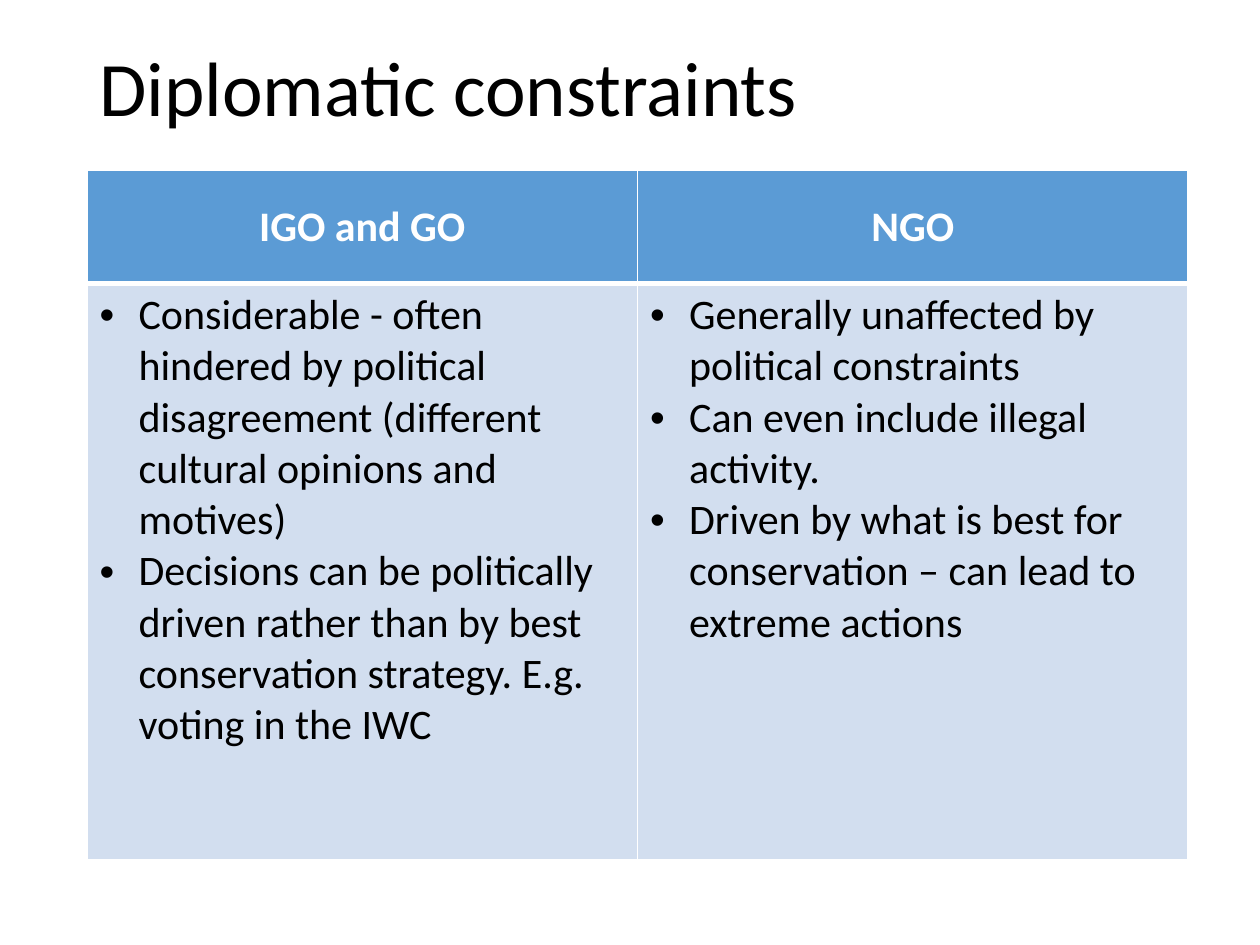
from dataclasses import dataclass

from lxml.etree import SubElement
from pptx import Presentation
from pptx.dml.color import RGBColor
from pptx.enum.text import MSO_ANCHOR, PP_ALIGN
from pptx.oxml import parse_xml
from pptx.oxml.ns import nsdecls, qn
from pptx.slide import Slide
from pptx.table import Table, _Cell
from pptx.util import Inches, Pt

WIDE, HIGH = Inches(10), Inches(7.5)


@dataclass(frozen=True)
class Theme:
    font: str = "Calibri"
    ink: str = "000000"
    paper: str = "FFFFFF"
    head: str = "5B9BD5"
    body: str = "D2DEEF"
    title: int = 44
    text: int = 24
    thin: int = 1
    thick: int = 3
    indent: float = 0.31


@dataclass(frozen=True)
class Box:
    left: float
    top: float
    width: float
    height: float

    def place(self) -> tuple[int, int, int, int]:
        return (int(self.left * WIDE), int(self.top * HIGH),
                int(self.width * WIDE), int(self.height * HIGH))


@dataclass(frozen=True)
class Column:
    head: str
    points: tuple[str, ...]


THEME = Theme()
TITLE = Box(0.069, 0, 0.862, 0.193)
GRID = Box(0.069, 0.18, 0.874, 0.73)
HEAD_SHARE = 0.12
COLUMNS = (
    Column("IGO and GO", (
        "Considerable - often hindered by political disagreement "
        "(different cultural opinions and motives)",
        "Decisions can be politically driven rather than by best "
        "conservation strategy. E.g. voting in the IWC",
    )),
    Column("NGO", (
        "Generally unaffected by political constraints",
        "Can even include illegal activity.",
        "Driven by what is best for conservation – can lead to extreme actions",
    )),
)


def style(frame, size: int, color: str, bold: bool = False) -> None:
    for para in frame.paragraphs:
        for run in para.runs:
            font = run.font
            font.name, font.size, font.bold = THEME.font, Pt(size), bold
            font.color.rgb = RGBColor.from_string(color)


def bullet(para) -> None:
    props = para._p.get_or_add_pPr()
    indent = Inches(THEME.indent)
    props.set("marL", str(indent))
    props.set("indent", str(-indent))
    SubElement(props, qn("a:buFont")).set("typeface", "Arial")
    SubElement(props, qn("a:buChar")).set("char", "•")


def paint(cell: _Cell, fill: str, top: int, bottom: int) -> None:
    cell.fill.solid()
    cell.fill.fore_color.rgb = RGBColor.from_string(fill)
    edges = {"L": THEME.thin, "R": THEME.thin, "T": top, "B": bottom}
    for spot, (side, width) in enumerate(edges.items()):
        line = parse_xml(
            f'<a:ln{side} {nsdecls("a")} w="{Pt(width)}"><a:solidFill>'
            f'<a:srgbClr val="{THEME.paper}"/></a:solidFill></a:ln{side}>')
        cell._tc.get_or_add_tcPr().insert(spot, line)


def draw_title(slide: Slide, text: str) -> None:
    frame = slide.shapes.add_textbox(*TITLE.place()).text_frame
    frame.word_wrap = True
    frame.vertical_anchor = MSO_ANCHOR.MIDDLE
    frame.text = text
    frame.paragraphs[0].line_spacing = 0.9
    style(frame, THEME.title, THEME.ink)


def draw_column(table: Table, index: int, column: Column) -> None:
    head, body = table.cell(0, index), table.cell(1, index)
    head.text_frame.text = column.head
    head.vertical_anchor = MSO_ANCHOR.MIDDLE
    head.text_frame.paragraphs[0].alignment = PP_ALIGN.CENTER
    style(head.text_frame, THEME.text, THEME.paper, True)
    paint(head, THEME.head, THEME.thin, THEME.thick)

    body.text_frame.text = "\n".join(column.points)
    for para in body.text_frame.paragraphs:
        bullet(para)
    style(body.text_frame, THEME.text, THEME.ink)
    paint(body, THEME.body, THEME.thick, THEME.thin)


def draw_table(slide: Slide) -> None:
    place = GRID.place()
    table = slide.shapes.add_table(2, len(COLUMNS), *place).table
    head = Inches(HEAD_SHARE * 7.5)
    table.rows[0].height = head
    table.rows[1].height = place[3] - head
    for index, column in enumerate(COLUMNS):
        draw_column(table, index, column)


def main() -> None:
    deck = Presentation()
    deck.slide_width, deck.slide_height = WIDE, HIGH
    slide = deck.slides.add_slide(deck.slide_layouts[6])
    draw_title(slide, "Diplomatic constraints")
    draw_table(slide)
    deck.save("out.pptx")


if __name__ == "__main__":
    main()
